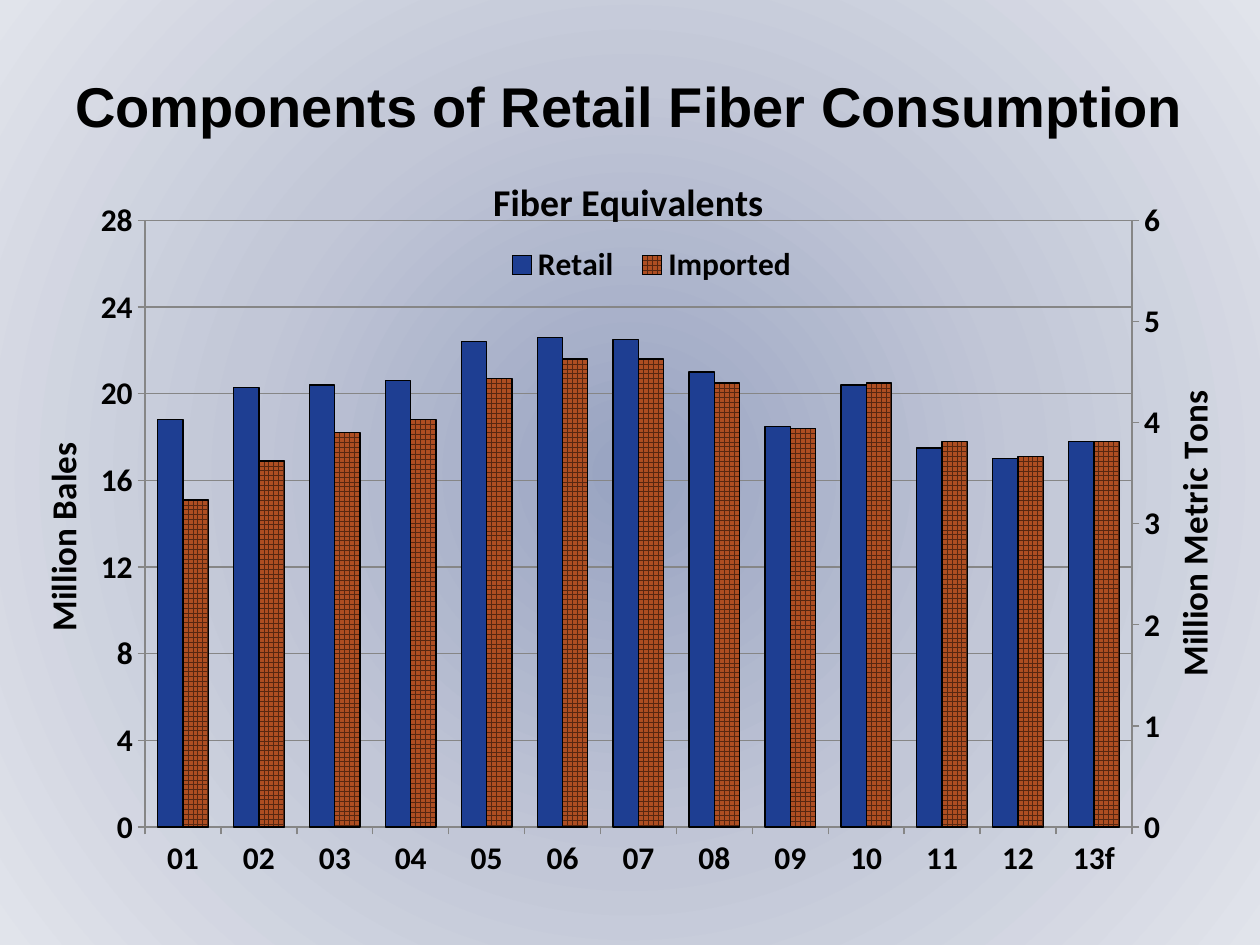
from copy import deepcopy

from pptx import Presentation
from pptx.chart.axis import ValueAxis
from pptx.chart.data import CategoryChartData
from pptx.dml.color import RGBColor
from pptx.enum.chart import XL_CHART_TYPE, XL_LEGEND_POSITION, XL_TICK_LABEL_POSITION, XL_TICK_MARK
from pptx.enum.dml import MSO_PATTERN
from pptx.enum.text import MSO_ANCHOR, PP_ALIGN
from pptx.oxml import parse_xml
from pptx.oxml.ns import nsdecls, qn
from pptx.util import Cm, Pt

COLUMN = XL_CHART_TYPE.COLUMN_CLUSTERED
TOP = XL_LEGEND_POSITION.TOP
LOW = XL_TICK_LABEL_POSITION.LOW
OUT, NONE = XL_TICK_MARK.OUTSIDE, XL_TICK_MARK.NONE
GRID = MSO_PATTERN.LARGE_GRID
MIDDLE, CENTER = MSO_ANCHOR.MIDDLE, PP_ALIGN.CENTER

COLORS = {"text": "000000", "axis": "868686", "retail": "1E3E92",
          "thread": "572711", "import": "AE4E22"}
GLOW = [(0, "98A3C1"), (50, "C2C7D7"), (100, "E1E4EB")]

HEAD = "Components of Retail Fiber Consumption"
YEARS = ["01", "02", "03", "04", "05", "06", "07", "08", "09", "10", "11", "12", "13f"]
BALES = {
    "Retail": [18.8, 20.3, 20.4, 20.6, 22.4, 22.6, 22.5, 21, 18.5, 20.4, 17.5, 17, 17.8],
    "Imported": [15.1, 16.9, 18.2, 18.8, 20.7, 21.6, 21.6, 20.5, 18.4, 20.5, 17.8, 17.1, 17.8],
}
TONS = {
    "Series 3": [4.1, 4.4, 4.5, 4.5, 4.9, 4.9, 4.9, 4.6, 4, 4.4, 3.8, 3.7, 3.9],
    "Series 4": [3.3, 3.7, 4, 4.1, 4.5, 4.7, 4.7, 4.5, 4, 4.5, 3.9, 3.7, 3.9],
}
LEFT_AXIS = {"minimum_scale": 0, "maximum_scale": 28, "major_unit": 4,
             "major_tick_mark": OUT, "minor_tick_mark": NONE, "has_major_gridlines": True}
RIGHT_AXIS = {**LEFT_AXIS, "maximum_scale": 6, "major_unit": 1, "has_major_gridlines": False}
YEAR_AXIS = {"major_tick_mark": OUT, "minor_tick_mark": NONE, "tick_label_position": LOW}
RIGHT_IDS = {"cat": "50010", "val": "50020"}


def rgb(name):
    return RGBColor.from_string(COLORS[name])


def apply(thing, values):
    for name, value in values.items():
        setattr(thing, name, value)


def style(font, size, face):
    apply(font, {"size": Pt(size), "name": face, "bold": True})
    font.color.rgb = rgb("text")


def write(frame, text, size, face):
    line = frame.paragraphs[0]
    line.text = text
    style(line.runs[0].font, size, face)
    return line


def place(node, inner=False, **spots):
    """Give a chart part a manual layout in fractions of the chart."""
    for old in node.findall(qn("c:layout")):
        node.remove(old)
    tags = '<c:layoutTarget val="inner"/>' if inner else ""
    tags += "".join(f'<c:{key}Mode val="edge"/>' for key in "xy")
    tags += "".join(f'<c:{key} val="{val}"/>' for key, val in spots.items())
    layout = parse_xml(f'<c:layout {nsdecls("c")}><c:manualLayout>{tags}</c:manualLayout></c:layout>')
    after = node.find(qn("c:overlay"))
    if after is None:
        node.insert(0, layout)
    else:
        after.addprevious(layout)


def name_axis(axis, text, x, y):
    frame = axis.axis_title.text_frame
    write(frame, text, 20, "Calibri")
    body = axis.axis_title._element.find(".//" + qn("a:bodyPr"))
    body.set("rot", "-5400000")
    body.set("vert", "horz")
    place(axis.axis_title._element, x=x, y=y)


def retie(axis, own, other):
    axis.find(qn("c:axId")).set("val", own)
    axis.find(qn("c:crossAx")).set("val", other)


def add_right(chart):
    """Move the ton series to a second plot with its own axis."""
    area = chart._chartSpace.find(".//" + qn("c:plotArea"))
    bars = area.find(qn("c:barChart"))
    twin = deepcopy(bars)
    bars.addnext(twin)
    cut = len(BALES)
    for plot, drop in ((bars, slice(cut, None)), (twin, slice(0, cut))):
        for item in plot.findall(qn("c:ser"))[drop]:
            plot.remove(item)
    for tag, val in zip(twin.findall(qn("c:axId")), RIGHT_IDS.values()):
        tag.set("val", val)

    left, base = area.find(qn("c:valAx")), area.find(qn("c:catAx"))
    right, under = deepcopy(left), deepcopy(base)
    left.addnext(right)
    right.addnext(under)
    retie(right, RIGHT_IDS["val"], RIGHT_IDS["cat"])
    retie(under, RIGHT_IDS["cat"], RIGHT_IDS["val"])
    under.find(qn("c:delete")).set("val", "1")
    right.find(qn("c:axPos")).set("val", "r")
    right.find(qn("c:crosses")).set("val", "max")
    axis = ValueAxis(right)
    apply(axis, RIGHT_AXIS)
    name_axis(axis, "Million Metric Tons", 0.948, 0.313)
    place(area, True, x=0.095, y=0.097, w=0.827, h=0.804)


def add_legend(chart):
    chart.has_legend = True
    legend = chart.legend
    apply(legend, {"position": TOP, "include_in_layout": False})
    style(legend.font, 18, "Calibri")
    spot = legend._element.find(qn("c:legendPos"))
    for index in reversed(range(len(BALES), len(BALES) + len(TONS))):
        spot.addnext(parse_xml(f'<c:legendEntry {nsdecls("c")}><c:idx val="{index}"/>'
                               '<c:delete val="1"/></c:legendEntry>'))
    place(legend._element, x=0.387, y=0.128, w=0.265, h=0.055)


def add_chart(slide):
    data = CategoryChartData(number_format="0.0")
    data.categories = YEARS
    for name, values in {**BALES, **TONS}.items():
        data.add_series(name, values)
    chart = slide.shapes.add_chart(COLUMN, Cm(0.64), Cm(2.97), Cm(24.1), Cm(15.21), data).chart
    style(chart.font, 18, "Calibri")
    chart._chartSpace.find(qn("c:chart")).addnext(parse_xml(
        f'<c:spPr {nsdecls("c", "a")}><a:noFill/><a:ln><a:noFill/></a:ln></c:spPr>'))

    chart.has_title = True
    write(chart.chart_title.text_frame, "Fiber Equivalents", 21.6, "Calibri")
    place(chart.chart_title._element, x=0.381, y=0.028)

    plot = chart.plots[0]
    apply(plot, {"gap_width": 100, "overlap": 0, "vary_by_categories": False})
    for item in plot.series:
        form = item.format
        if item.name in TONS:
            form.fill.background()
            form.line.fill.background()
            continue
        form.line.color.rgb = rgb("text")
        form.line.width = Pt(0.75)
        if item.name == "Retail":
            form.fill.solid()
            form.fill.fore_color.rgb = rgb("retail")
        else:
            form.fill.patterned()
            form.fill.pattern = GRID
            form.fill.fore_color.rgb = rgb("thread")
            form.fill.back_color.rgb = rgb("import")

    for axis, values in ((chart.category_axis, YEAR_AXIS), (chart.value_axis, LEFT_AXIS)):
        apply(axis, values)
        axis.format.line.color.rgb = rgb("axis")
        style(axis.tick_labels.font, 18, "Calibri")
    axis = chart.value_axis
    axis.major_gridlines.format.line.color.rgb = rgb("axis")
    apply(axis.tick_labels, {"number_format": "0", "number_format_is_linked": False})
    name_axis(axis, "Million Bales", 0, 0.382)
    add_right(chart)
    add_legend(chart)


def paint(slide):
    """Fill the background with a round gradient."""
    slide.background.fill.solid()
    old = slide.element.find(".//" + qn("p:bgPr")).find(qn("a:solidFill"))
    stops = "".join(f'<a:gs pos="{pos * 1000}"><a:srgbClr val="{color}"/></a:gs>' for pos, color in GLOW)
    sides = " ".join(f'{side}="50000"' for side in "ltrb")
    old.getparent().replace(old, parse_xml(
        f'<a:gradFill {nsdecls("a")} rotWithShape="1"><a:gsLst>{stops}</a:gsLst>'
        f'<a:path path="circle"><a:fillToRect {sides}/></a:path></a:gradFill>'))


def main():
    deck = Presentation()
    apply(deck, {"slide_width": Cm(25.4), "slide_height": Cm(19.05)})
    slide = deck.slides.add_slide(deck.slide_layouts[6])
    paint(slide)
    frame = slide.shapes.add_textbox(Cm(0.64), Cm(0.84), Cm(24.1), Cm(2.54)).text_frame
    apply(frame, {"word_wrap": True, "vertical_anchor": MIDDLE})
    write(frame, HEAD, 32, "Arial").alignment = CENTER
    add_chart(slide)
    deck.save("out.pptx")


if __name__ == "__main__":
    main()
